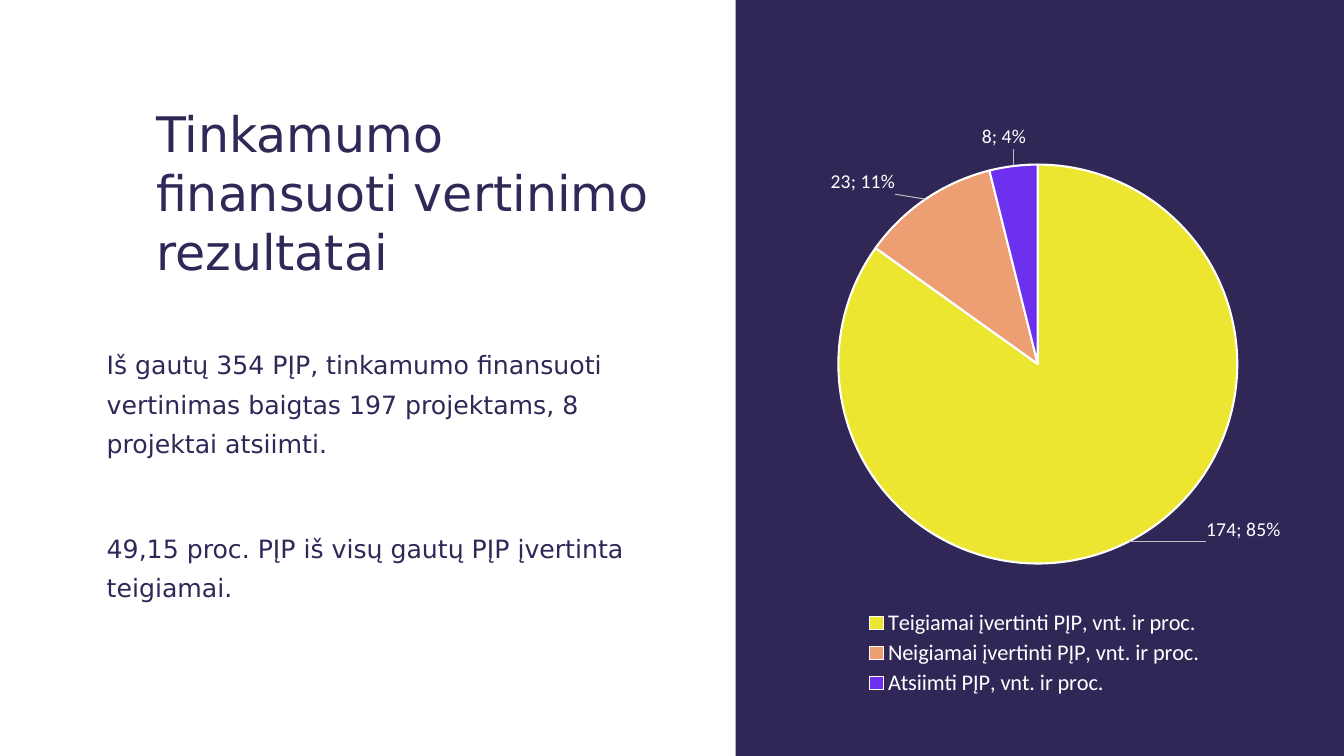
from dataclasses import dataclass

from lxml.etree import SubElement
from pptx import Presentation
from pptx.chart.chart import Chart
from pptx.chart.data import CategoryChartData
from pptx.dml.color import RGBColor
from pptx.enum.chart import XL_CHART_TYPE, XL_LABEL_POSITION, XL_LEGEND_POSITION
from pptx.enum.shapes import MSO_SHAPE
from pptx.enum.text import MSO_ANCHOR, MSO_AUTO_SIZE, PP_ALIGN
from pptx.oxml import parse_xml
from pptx.oxml.ns import nsdecls, qn
from pptx.slide import Slide
from pptx.util import Cm, Pt


@dataclass(frozen=True)
class Theme:
    text_font: str = "DejaVu Sans"
    chart_font: str = "Calibri"
    panel: RGBColor = RGBColor(0x30, 0x27, 0x57)
    title: RGBColor = RGBColor(0x30, 0x28, 0x57)
    white: RGBColor = RGBColor(0xFF, 0xFF, 0xFF)
    leader: str = "BFBFBF"
    title_size: Pt = Pt(35)
    body_size: Pt = Pt(18)
    legend_size: Pt = Pt(16)
    label_size: Pt = Pt(14)


@dataclass(frozen=True)
class Outcome:
    name: str
    count: int
    color: str
    label_dx: float  # label shift as a share of the chart size
    label_dy: float


THEME = Theme()
HEADING = "Tinkamumo finansuoti vertinimo rezultatai"
FINDINGS = [
    "Iš gautų 354 PĮP, tinkamumo finansuoti vertinimas baigtas 197 projektams, "
    "8 projektai atsiimti.",
    "49,15 proc. PĮP iš visų gautų PĮP įvertinta teigiamai.",
]
OUTCOMES = [
    Outcome("Teigiamai įvertinti PĮP, vnt. ir proc.", 174, "EDE630", 0.11, -0.05),
    Outcome("Neigiamai įvertinti PĮP, vnt. ir proc.", 23, "ED9E72", -0.04, 0.0),
    Outcome("Atsiimti PĮP, vnt. ir proc.", 8, "6C30EE", 0.02, -0.02),
]


def style_font(font, name: str, size: Pt, color: RGBColor) -> None:
    font.name, font.size = name, size
    font.color.rgb = color


def layout_xml(x: float, y: float, w: float = 0, h: float = 0, target: str = ""):
    """Manual chart layout: an offset, or a whole frame when w is given."""
    parts = f'<c:layoutTarget val="{target}"/>' if target else ""
    if w:
        parts += '<c:xMode val="edge"/><c:yMode val="edge"/>'
    parts += f'<c:x val="{x}"/><c:y val="{y}"/>'
    if w:
        parts += f'<c:w val="{w}"/><c:h val="{h}"/>'
    return parse_xml(
        f'<c:layout {nsdecls("c")}><c:manualLayout>{parts}</c:manualLayout></c:layout>'
    )


def add_panel(slide: Slide) -> None:
    panel = slide.shapes.add_shape(
        MSO_SHAPE.RECTANGLE, Cm(18.54), 0, Cm(15.33), Cm(19.05)
    )
    panel.shadow.inherit = False
    panel.fill.solid()
    panel.fill.fore_color.rgb = THEME.panel
    panel.line.fill.background()


def set_heading(slide: Slide) -> None:
    heading = slide.shapes.title
    heading.left, heading.top = Cm(3.68), Cm(2.41)
    heading.width, heading.height = Cm(13), Cm(4.85)
    frame = heading.text_frame
    frame.text = HEADING
    frame.auto_size = MSO_AUTO_SIZE.NONE
    frame.vertical_anchor = MSO_ANCHOR.MIDDLE
    paragraph = frame.paragraphs[0]
    paragraph.alignment = PP_ALIGN.LEFT
    style_font(paragraph.runs[0].font, THEME.text_font, THEME.title_size, THEME.title)


def add_findings(slide: Slide) -> None:
    box = slide.shapes.add_textbox(Cm(2.44), Cm(8.46), Cm(14.94), Cm(8.64))
    frame = box.text_frame
    frame.word_wrap = True
    frame.text = "\n".join(FINDINGS)
    for index, paragraph in enumerate(frame.paragraphs):
        paragraph.line_spacing = 1.3
        paragraph.space_before = Pt(47 if index else 0)
        style_font(
            paragraph.runs[0].font, THEME.text_font, THEME.body_size, THEME.panel
        )


def style_labels(chart: Chart) -> None:
    series = chart.plots[0].series[0]
    labels = series.data_labels
    labels.show_value = labels.show_percentage = True
    labels.position = XL_LABEL_POSITION.OUTSIDE_END
    style_font(labels.font, THEME.chart_font, THEME.label_size, THEME.white)
    labels_xml = series.data_labels._element

    # Each label is moved off its slice
    for index, outcome in enumerate(OUTCOMES):
        label = series.points[index].data_label
        label.position = XL_LABEL_POSITION.OUTSIDE_END
        style_font(label.font, THEME.chart_font, THEME.label_size, THEME.white)
        label_xml = labels_xml.findall(qn("c:dLbl"))[index]
        label_xml.find(qn("c:idx")).addnext(
            layout_xml(outcome.label_dx, outcome.label_dy)
        )
        label_xml.find(qn("c:showPercent")).set("val", "1")
        SubElement(label_xml, qn("c:separator")).text = "; "

    # Leader lines follow the separator
    for tag in ("c:separator", "c:showLeaderLines", "c:leaderLines"):
        for old in labels_xml.findall(qn(tag)):
            labels_xml.remove(old)
    SubElement(labels_xml, qn("c:separator")).text = "; "
    SubElement(labels_xml, qn("c:showLeaderLines")).set("val", "1")
    labels_xml.append(parse_xml(
        f'<c:leaderLines {nsdecls("c", "a")}><c:spPr><a:ln w="9525"><a:solidFill>'
        f'<a:srgbClr val="{THEME.leader}"/></a:solidFill></a:ln></c:spPr></c:leaderLines>'
    ))


def add_results_chart(slide: Slide) -> None:
    data = CategoryChartData()
    data.categories = [outcome.name for outcome in OUTCOMES]
    data.add_series("Series 1", [outcome.count for outcome in OUTCOMES])
    chart = slide.shapes.add_chart(
        XL_CHART_TYPE.PIE, Cm(17.55), Cm(3.07), Cm(17.04), Cm(14.71), data
    ).chart
    chart.has_title = False
    style_font(chart.font, THEME.chart_font, THEME.label_size, THEME.white)

    # Slices
    plot = chart.plots[0]
    plot.vary_by_categories = True
    for index, outcome in enumerate(OUTCOMES):
        slice_format = plot.series[0].points[index].format
        slice_format.fill.solid()
        slice_format.fill.fore_color.rgb = RGBColor.from_string(outcome.color)
        slice_format.line.color.rgb = THEME.white
        slice_format.line.width = Pt(1.5)
    style_labels(chart)

    # Legend below the pie
    chart.has_legend = True
    legend = chart.legend
    legend.position = XL_LEGEND_POSITION.BOTTOM
    legend.include_in_layout = False
    style_font(legend.font, THEME.chart_font, THEME.legend_size, THEME.white)
    legend_xml = legend._element
    plot_area = chart._chartSpace.chart.plotArea
    for parent in (legend_xml, plot_area):
        for old in parent.findall(qn("c:layout")):
            parent.remove(old)
    legend_xml.find(qn("c:legendPos")).addnext(layout_xml(0.25, 0.83, 0.5, 0.16))
    plot_area.insert(0, layout_xml(0.21, 0.07, 0.59, 0.69, "inner"))


def main() -> None:
    presentation = Presentation()
    presentation.slide_width, presentation.slide_height = Cm(33.87), Cm(19.05)
    slide = presentation.slides.add_slide(presentation.slide_layouts[5])
    slide.background.fill.solid()
    slide.background.fill.fore_color.rgb = THEME.white
    add_panel(slide)
    set_heading(slide)
    add_findings(slide)
    add_results_chart(slide)
    presentation.save("out.pptx")


if __name__ == "__main__":
    main()
